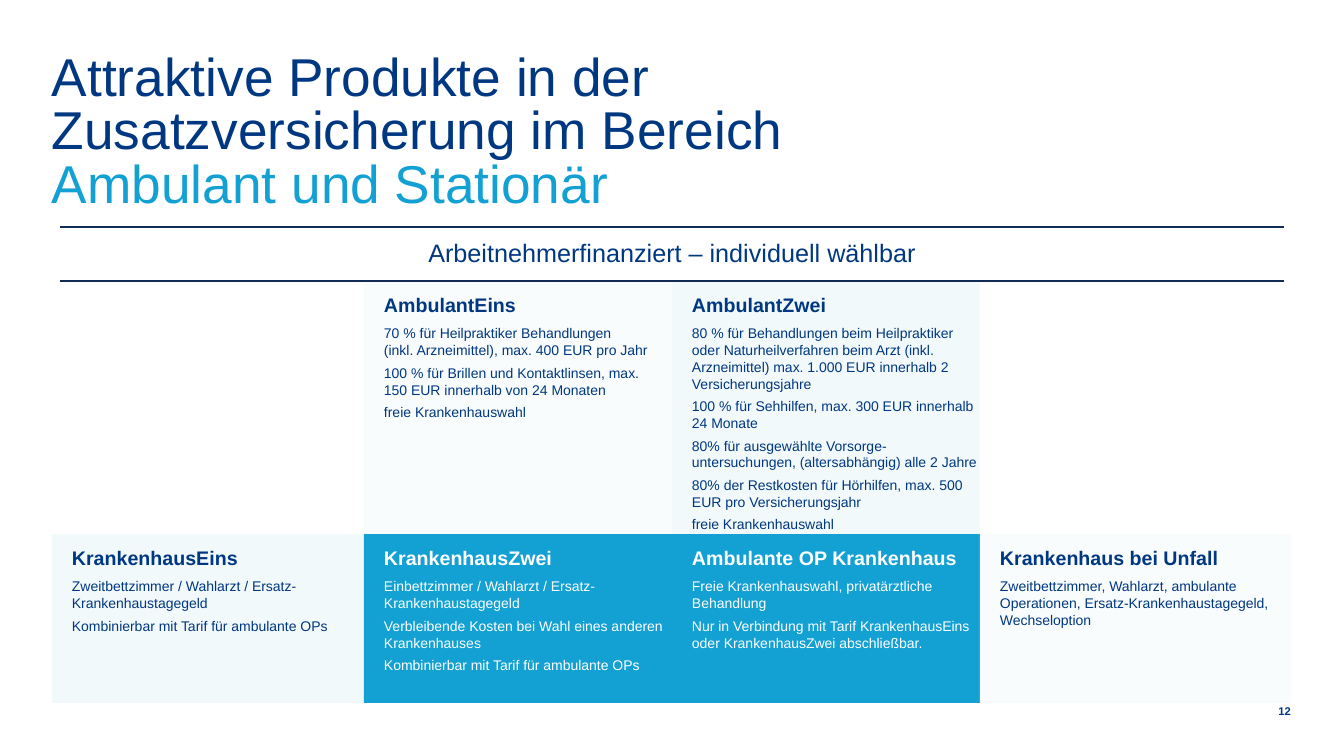
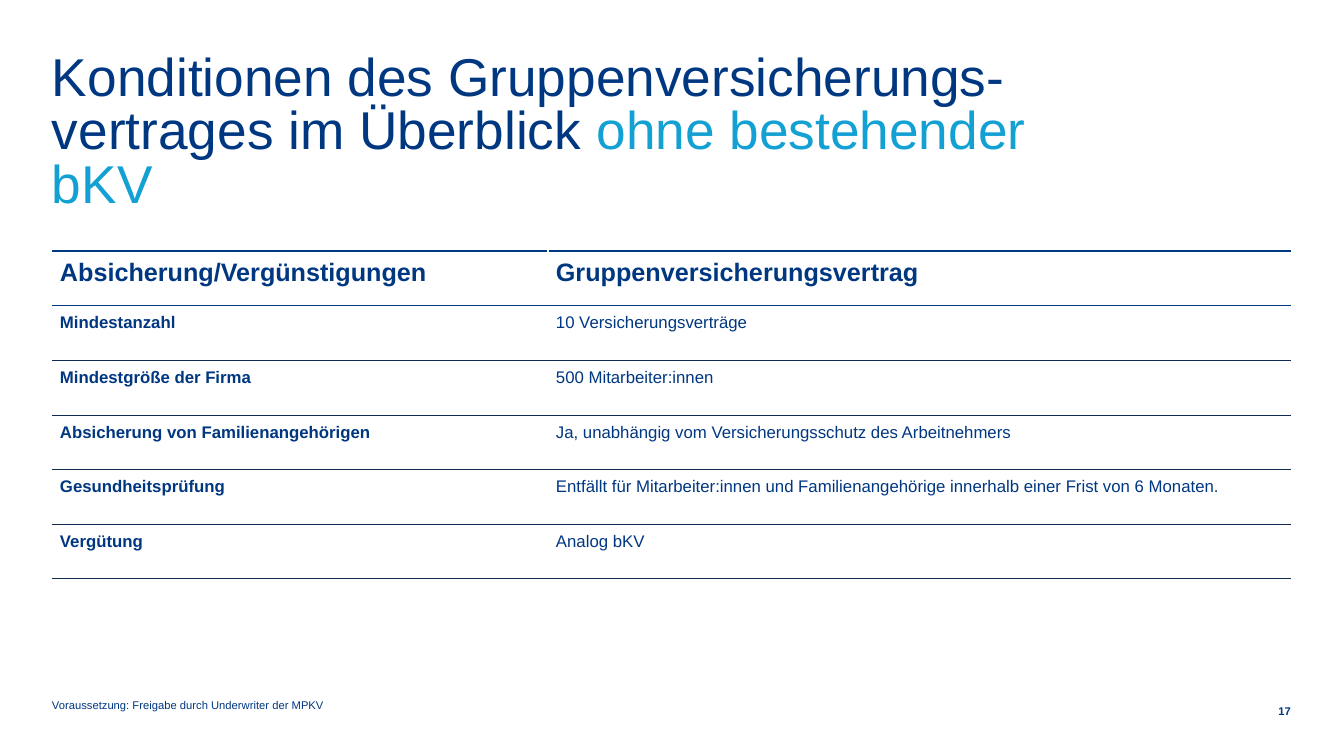
from dataclasses import dataclass
from typing import Any

from lxml.etree import SubElement
from pptx import Presentation
from pptx.dml.color import RGBColor
from pptx.enum.shapes import MSO_SHAPE
from pptx.enum.text import MSO_ANCHOR, PP_ALIGN
from pptx.oxml.ns import qn
from pptx.util import Emu, Pt

# Shared scale, colours and formats
PAGE_WIDTH, PAGE_HEIGHT = 1344, 756
EMU_PER_PX = 12192000 / PAGE_WIDTH

NAVY = RGBColor(0x00, 0x37, 0x81)
RULE = RGBColor(0x12, 0x2B, 0x54)
CYAN = RGBColor(0x13, 0xA0, 0xD3)
MIST = RGBColor(0xF2, 0xF9, 0xFA)
PALE = RGBColor(0xF9, 0xFC, 0xFC)
WHITE = RGBColor(0xFF, 0xFF, 0xFF)

FONT = "Arial"
LEFT, RIGHT = 52, 1291
NO_GRID_STYLE = "{2D5ABB26-0587-4C30-8999-92F81FD0307C}"

TITLE_PARA = {"line_spacing": Pt(38)}
NUMBER_PARA = {"alignment": PP_ALIGN.RIGHT, "line_spacing": Pt(10)}
HEADING_PARA = {"alignment": PP_ALIGN.LEFT, "space_after": Pt(6)}
BODY_PARA = {"alignment": PP_ALIGN.LEFT, "space_after": Pt(4)}


@dataclass(frozen=True)
class Span:
    text: str
    size: int
    color: RGBColor = NAVY
    bold: bool = False


@dataclass(frozen=True)
class Card:
    column: int
    row: int
    fill: RGBColor
    heading: str
    items: tuple[str, ...]
    color: RGBColor = NAVY


@dataclass(frozen=True)
class Border:
    side: str
    color: RGBColor
    points: float


def px(value: int) -> Emu:
    return Emu(round(value * EMU_PER_PX))


def apply_format(target: Any, values: dict[str, Any]) -> None:
    for name, value in values.items():
        setattr(target, name, value)


# Text
def write_para(para: Any, spans: list[Span], values: dict[str, Any]) -> None:
    apply_format(para, values)
    for span in spans:
        for index, line in enumerate(span.text.split("\n")):
            if index:
                para.add_line_break()
            if line:
                run = para.add_run()
                run.text = line
                apply_format(run.font, {"name": FONT, "size": Pt(span.size), "bold": span.bold})
                run.font.color.rgb = span.color


def set_frame(frame: Any, left: int = 0, top: int = 0, anchor: Any = MSO_ANCHOR.TOP) -> None:
    apply_format(frame, {
        "word_wrap": True, "vertical_anchor": anchor,
        "margin_left": px(left), "margin_top": px(top),
        "margin_right": 0, "margin_bottom": 0,
    })


def add_text(page: Any, at: tuple[int, int, int, int], spans: list[Span],
             values: dict[str, Any], anchor: Any = MSO_ANCHOR.TOP) -> None:
    box = page.shapes.add_textbox(*map(px, at))
    set_frame(box.text_frame, anchor=anchor)
    write_para(box.text_frame.paragraphs[0], spans, values)


def add_page(deck: Any, title: list[Span], number: int) -> Any:
    page = deck.slides.add_slide(deck.slide_layouts[6])
    add_text(page, (LEFT, 54, 1028, 98), title, TITLE_PARA)
    add_text(page, (RIGHT - 30, 703, 30, 16), [Span(str(number), 8, bold=True)],
             NUMBER_PARA, MSO_ANCHOR.MIDDLE)
    return page


# Tables
def add_plain_table(page: Any, at: tuple[int, int, int, int], rows: int,
                    widths: list[int]) -> Any:
    table = page.shapes.add_table(rows, len(widths), *map(px, at)).table
    apply_format(table, {"first_row": False, "horz_banding": False})
    table._tbl.tblPr.find(qn("a:tableStyleId")).text = NO_GRID_STYLE
    for column, width in zip(table.columns, widths):
        column.width = px(width)
    return table


def fill_cell(cell: Any, span: Span, margin: int, borders: list[Border],
              anchor: Any = MSO_ANCHOR.TOP, align: Any = PP_ALIGN.LEFT) -> None:
    sides = ("left", "top", "right", "bottom")
    apply_format(cell, {f"margin_{side}": px(margin) for side in sides})
    cell.vertical_anchor = anchor
    write_para(cell.text_frame.paragraphs[0], [span], {"alignment": align})
    properties = cell._tc.get_or_add_tcPr()
    # Borders come before the fill, in the order left, right, top, bottom
    for border in sorted(borders, key=lambda item: "LRTB".index(item.side)):
        line = SubElement(properties, qn(f"a:ln{border.side}"), w=str(Pt(border.points)))
        SubElement(SubElement(line, qn("a:solidFill")), qn("a:srgbClr"), val=str(border.color))
    cell.fill.background()


# Product page
COLUMN_EDGES = [LEFT, 364, 672, 980, RIGHT]
ROW_EDGES = [281, 534, 703]

CARDS = [
    Card(1, 0, PALE, "AmbulantEins", (
        "70 % für Heilpraktiker Behandlungen\n(inkl. Arzneimittel), max. 400 EUR pro Jahr",
        "100 % für Brillen und Kontaktlinsen, max.\n150 EUR innerhalb von 24 Monaten",
        "freie Krankenhauswahl")),
    Card(2, 0, MIST, "AmbulantZwei", (
        "80 % für Behandlungen beim Heilpraktiker oder Naturheilverfahren beim Arzt "
        "(inkl. Arzneimittel) max. 1.000 EUR innerhalb 2 Versicherungsjahre",
        "100 % für Sehhilfen, max. 300 EUR innerhalb 24 Monate",
        "80% für ausgewählte Vorsorge-untersuchungen, (altersabhängig) alle 2 Jahre",
        "80% der Restkosten für Hörhilfen, max. 500 EUR pro Versicherungsjahr",
        "freie Krankenhauswahl")),
    Card(0, 1, MIST, "KrankenhausEins", (
        "Zweitbettzimmer / Wahlarzt / Ersatz-Krankenhaustagegeld",
        "Kombinierbar mit Tarif für ambulante OPs")),
    Card(1, 1, CYAN, "KrankenhausZwei", (
        "Einbettzimmer / Wahlarzt / Ersatz-Krankenhaustagegeld",
        "Verbleibende Kosten bei Wahl eines anderen Krankenhauses",
        "Kombinierbar mit Tarif für ambulante OPs"), WHITE),
    Card(2, 1, CYAN, "Ambulante OP Krankenhaus", (
        "Freie Krankenhauswahl, privatärztliche Behandlung",
        "Nur in Verbindung mit Tarif KrankenhausEins oder KrankenhausZwei abschließbar."), WHITE),
    Card(3, 1, PALE, "Krankenhaus bei Unfall", (
        "Zweitbettzimmer, Wahlarzt, ambulante Operationen, "
        "Ersatz-Krankenhaustagegeld,\nWechseloption",)),
]


def add_card(page: Any, card: Card) -> None:
    left, right = COLUMN_EDGES[card.column:card.column + 2]
    top, bottom = ROW_EDGES[card.row:card.row + 2]
    shape = page.shapes.add_shape(
        MSO_SHAPE.RECTANGLE, px(left), px(top), px(right - left), px(bottom - top))
    shape.shadow.inherit = False
    shape.fill.solid()
    shape.fill.fore_color.rgb = card.fill
    shape.line.fill.background()
    frame = shape.text_frame
    set_frame(frame, left=20, top=12)
    write_para(frame.paragraphs[0], [Span(card.heading, 14, card.color, True)], HEADING_PARA)
    for item in card.items:
        write_para(frame.add_paragraph(), [Span(item, 10, card.color)], BODY_PARA)


def build_products(deck: Any) -> None:
    page = add_page(deck, [
        Span("Attraktive Produkte in der Zusatzversicherung im Bereich\n", 38),
        Span("Ambulant und Stationär", 38, CYAN)], 12)
    for card in CARDS:
        add_card(page, card)
    banner = add_plain_table(page, (60, 227, 1224, 54), 1, [1224])
    fill_cell(banner.cell(0, 0), Span("Arbeitnehmerfinanziert – individuell wählbar", 18), 0,
              [Border("T", RULE, 1), Border("B", RULE, 1)], MSO_ANCHOR.MIDDLE, PP_ALIGN.CENTER)


# Conditions page
CONDITIONS = [
    ("Absicherung/Vergünstigungen", "Gruppenversicherungsvertrag"),
    ("Mindestanzahl", "10 Versicherungsverträge"),
    ("Mindestgröße der Firma", "500 Mitarbeiter:innen"),
    ("Absicherung von Familienangehörigen",
     "Ja, unabhängig vom Versicherungsschutz des Arbeitnehmers"),
    ("Gesundheitsprüfung",
     "Entfällt für Mitarbeiter:innen und Familienangehörige innerhalb einer Frist von 6 Monaten."),
    ("Vergütung", "Analog bKV"),
]


def condition_borders(row: int, column: int) -> list[Border]:
    last = len(CONDITIONS) - 1
    if row == 0:
        divider = Border("L" if column else "R", WHITE, 1)
        return [Border("T", NAVY, 1), Border("B", NAVY, 1), divider]
    top = Border("T", NAVY, 1) if row == 1 else Border("T", RULE, 0.5)
    return [top, Border("B", RULE, 1 if row == last else 0.5)]


def build_conditions(deck: Any) -> None:
    page = add_page(deck, [
        Span("Konditionen des Gruppenversicherungs-vertrages im Überblick ", 38),
        Span("ohne bestehender bKV", 38, CYAN)], 17)
    table = add_plain_table(page, (LEFT, 251, RIGHT - LEFT, 328), len(CONDITIONS), [496, 743])
    for row, texts in enumerate(CONDITIONS):
        for column, text in enumerate(texts):
            header = row == 0
            span = Span(text, 18 if header else 12, bold=header or column == 0)
            fill_cell(table.cell(row, column), span, 8, condition_borders(row, column))
    add_text(page, (LEFT, 698, 547, 56),
             [Span("Voraussetzung: Freigabe durch Underwriter der MPKV", 8)], {})


def main() -> None:
    deck = Presentation()
    apply_format(deck, {"slide_width": px(PAGE_WIDTH), "slide_height": px(PAGE_HEIGHT)})
    build_products(deck)
    build_conditions(deck)
    deck.save("out.pptx")


if __name__ == "__main__":
    main()
